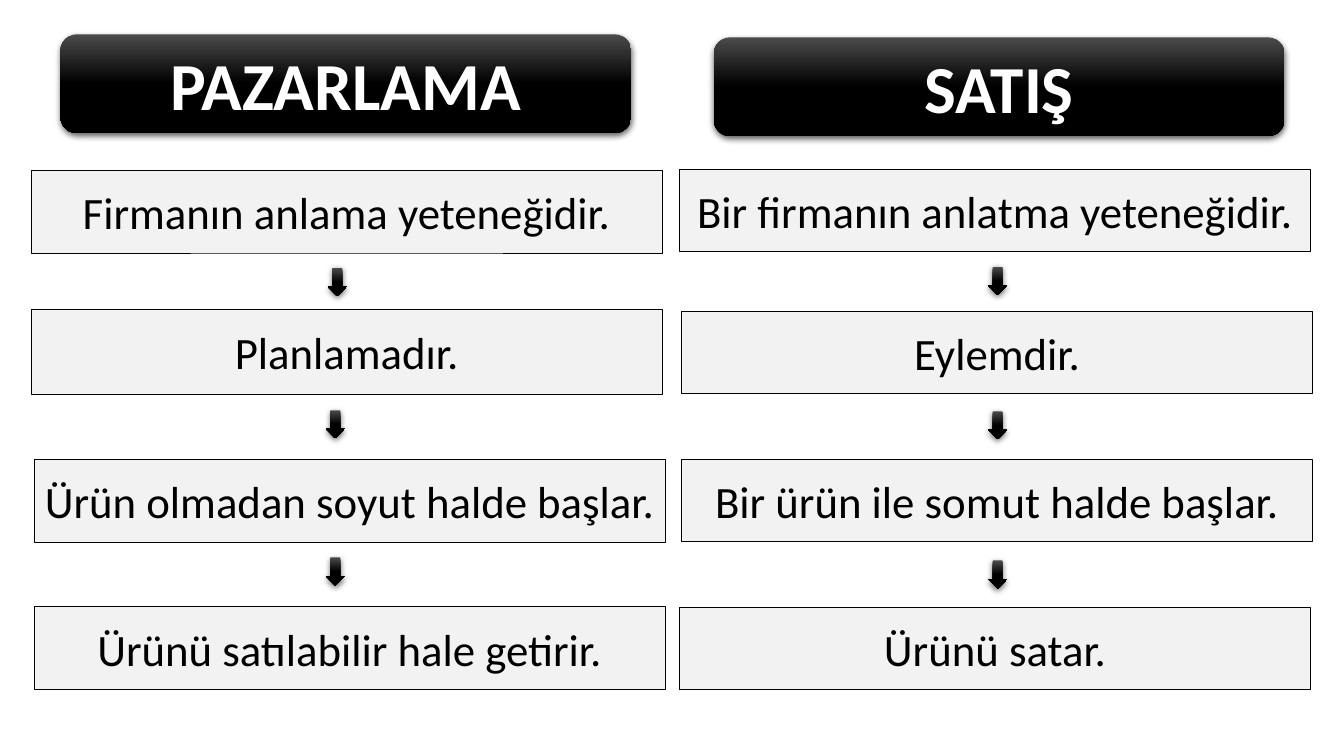
from copy import deepcopy

from lxml import etree
from pptx import Presentation
from pptx.dml.color import RGBColor
from pptx.enum import shapes, text
from pptx.oxml import ns
from pptx.util import Pt

# Lengths are px, 100 to the inch.
SCALE = 9144
SLIDE = (1333, 750)
HEADING_SIZE = (566, 98)
STEP_WIDTH = 626
ARROW_SIZE = (19, 28)

# Steps: left, top, height, wording. Arrows: left, top.
COLUMNS = [
    {
        "heading": (60, 34, "PAZARLAMA"),
        "steps": [
            (31, 169, 82, "Firmanın anlama yeteneğidir."),
            (31, 307, 84, "Planlamadır."),
            (34, 456, 82, "Ürün olmadan soyut halde başlar."),
            (34, 602, 82, "Ürünü satılabilir hale getirir."),
        ],
        "arrows": [(325, 266), (323, 407), (323, 553)],
    },
    {
        "heading": (708, 37, "SATIŞ"),
        "steps": [
            (674, 168, 81, "Bir firmanın anlatma yeteneğidir."),
            (676, 309, 81, "Eylemdir."),
            (676, 456, 81, "Bir ürün ile somut halde başlar."),
            (674, 603, 81, "Ürünü satar."),
        ],
        "arrows": [(980, 265), (980, 408), (980, 556)],
    },
]

FONT = "Calibri"
BLACK = RGBColor(0x00, 0x00, 0x00)
CHARCOAL = RGBColor(0x4B, 0x4B, 0x4B)
WHITE = RGBColor(0xFF, 0xFF, 0xFF)
PALE_GREY = RGBColor(0xF2, 0xF2, 0xF2)
GLOSS = [(0, CHARCOAL), (0.5, BLACK), (1, BLACK)]


def add_box(page, kind, left, top, width, height):
    box = page.shapes.add_shape(kind, *(n * SCALE for n in (left, top, width, height)))
    box.shadow.inherit = False
    return box


def make_glossy(box):
    """Give a borderless dark gradient and a soft shadow below."""
    box.line.fill.background()
    box.fill.gradient()
    box.fill.gradient_angle = 270
    properties = box._element.spPr
    stops = properties.find(".//" + ns.qn("a:gsLst"))
    stops.append(deepcopy(stops[-1]))
    for stop, (position, color) in zip(box.fill.gradient_stops, GLOSS):
        stop.position = position
        stop.color.rgb = color

    effects = properties.find(ns.qn("a:effectLst"))
    shadow = etree.SubElement(
        effects, ns.qn("a:outerShdw"), blurRad=str(Pt(4.5)), dist=str(Pt(1.5)),
        dir="5400000", rotWithShape="0")
    color = etree.SubElement(shadow, ns.qn("a:srgbClr"), val=str(BLACK))
    etree.SubElement(color, ns.qn("a:alpha"), val="63000")


def write(box, wording, size, color, bold=False):
    frame = box.text_frame
    frame.word_wrap = True
    frame.margin_left = frame.margin_right = 5 * SCALE
    frame.vertical_anchor = text.MSO_ANCHOR.MIDDLE
    para = frame.paragraphs[0]
    para.alignment = text.PP_ALIGN.CENTER
    span = para.add_run()
    span.text = wording
    span.font.name = FONT
    span.font.size = Pt(size)
    span.font.bold = bold
    span.font.color.rgb = color


def add_column(page, column):
    left, top, wording = column["heading"]
    heading = add_box(page, shapes.MSO_SHAPE.ROUNDED_RECTANGLE, left, top, *HEADING_SIZE)
    make_glossy(heading)
    write(heading, wording, 48, WHITE, bold=True)

    for left, top, height, wording in column["steps"]:
        step = add_box(page, shapes.MSO_SHAPE.RECTANGLE, left, top, STEP_WIDTH, height)
        step.fill.solid()
        step.fill.fore_color.rgb = PALE_GREY
        step.line.color.rgb = BLACK
        step.line.width = Pt(0.5)
        write(step, wording, 32, BLACK)

    for left, top in column["arrows"]:
        make_glossy(add_box(page, shapes.MSO_SHAPE.DOWN_ARROW, left, top, *ARROW_SIZE))


def main():
    deck = Presentation()
    deck.slide_width, deck.slide_height = (n * SCALE for n in SLIDE)
    page = deck.slides.add_slide(deck.slide_layouts[6])
    for column in COLUMNS:
        add_column(page, column)
    deck.save("out.pptx")


if __name__ == "__main__":
    main()
